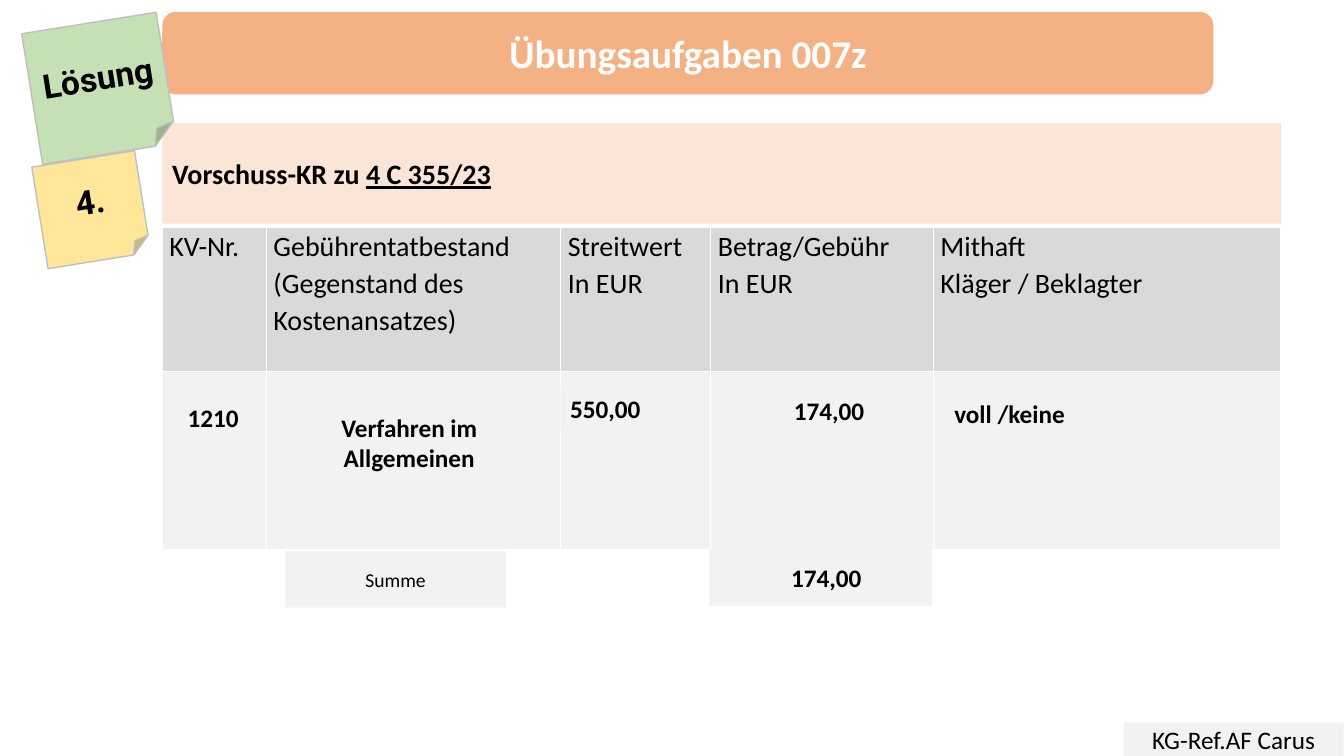
"""Builds the exercise slide with the fee table and its solution."""
import dataclasses

import lxml.etree
import pptx
import pptx.dml.color
import pptx.enum.shapes
import pptx.enum.text
import pptx.oxml.ns
import pptx.util

Cm, Pt = pptx.util.Cm, pptx.util.Pt
RGB = pptx.dml.color.RGBColor.from_string
SHAPE = pptx.enum.shapes.MSO_SHAPE
ALIGN = pptx.enum.text.PP_ALIGN
MIDDLE = pptx.enum.text.MSO_ANCHOR.MIDDLE
qn = pptx.oxml.ns.qn


@dataclasses.dataclass(frozen=True)
class Theme:
    font: str = "Calibri"
    note_font: str = "Roboto"
    ink: str = "000000"
    white: str = "FFFFFF"
    banner: str = "F4B183"
    case: str = "FBE5D6"
    header: str = "D9D9D9"
    cell: str = "F2F2F2"
    green: str = "C5E0B4"
    yellow: str = "FFE699"
    edge: str = "BFBFBF"
    title: int = 28
    note: int = 24
    heading: int = 20
    body: int = 18
    small: int = 14


T = Theme()


def style(p, size, bold=False, color=T.ink, font=T.font, align=None, spacing=None):
    p.font.size, p.font.bold, p.font.name = Pt(size), bold, font
    p.font.color.rgb = RGB(color)
    p.alignment, p.line_spacing = align, spacing


def add_box(box, fill, text="", kind=SHAPE.RECTANGLE, size=T.body, **look):
    sp = s.shapes.add_shape(kind, *map(Cm, box))
    sp.shadow.inherit = False
    sp.fill.solid()
    sp.fill.fore_color.rgb = RGB(fill)
    sp.line.fill.background()
    tf = sp.text_frame
    tf.word_wrap, tf.vertical_anchor = True, MIDDLE
    p = tf.paragraphs[0]
    if text:
        p.add_run().text = text
        style(p, size, **look)
    return sp


prs = pptx.Presentation()
prs.slide_width, prs.slide_height = Cm(33.87), Cm(19.05)
s = prs.slides.add_slide(prs.slide_layouts[5])

banner_box = (4.09, 0.3, 26.49, 2.08)
banner = add_box(banner_box, T.banner, kind=SHAPE.ROUNDED_RECTANGLE)
title = s.shapes.title
banner.element.addnext(title.element)
title.left, title.top, title.width, title.height = map(Cm, banner_box)
title.text_frame.text = "Übungsaufgaben 007z"
title.text_frame.vertical_anchor = MIDDLE
style(title.text_frame.paragraphs[0], T.title, True, T.white, align=ALIGN.CENTER)

columns = [
    (2.62, "KV-Nr."),
    (7.42, "Gebührentatbestand\n(Gegenstand des Kostenansatzes)"),
    (3.78, "Streitwert\nIn EUR"),
    (5.61, "Betrag/Gebühr\nIn EUR"),
    (8.76, "Mithaft\nKläger / Beklagter"),
]
rows = [(3.63, T.header), (4.47, T.cell)]
table = s.shapes.add_table(len(rows), len(columns), Cm(4.09), Cm(5.74),
                           Cm(28.19), Cm(8.1)).table
table.first_row = table.horz_banding = False
for c, (width, heading) in enumerate(columns):
    table.columns[c].width = Cm(width)
    table.cell(0, c).text = heading
    for p in table.cell(0, c).text_frame.paragraphs:
        style(p, T.heading, spacing=1.07)
for r, (height, fill) in enumerate(rows):
    table.rows[r].height = Cm(height)
    for cell in table.rows[r].cells:
        cell.margin_left = cell.margin_right = Cm(0.18)
        cell.margin_top = cell.margin_bottom = 0
        cell.fill.solid()
        cell.fill.fore_color.rgb = RGB(fill)
        tcPr = cell.fill._xPr
        for i, side in enumerate(("a:lnL", "a:lnR", "a:lnT", "a:lnB")):
            ln = lxml.etree.Element(qn(side), w=str(Pt(1)))
            solid = lxml.etree.SubElement(ln, qn("a:solidFill"))
            lxml.etree.SubElement(solid, qn("a:srgbClr"), val=T.white)
            tcPr.insert(i, ln)

case = add_box((4.09, 3.1, 28.19, 2.54), T.case, "Vorschuss-KR zu ",
               size=T.heading, bold=True, align=ALIGN.LEFT)
number = case.text_frame.paragraphs[0].add_run()
number.text = "4 C 355/23"
number.font.underline = True

notes = [
    ("Lösung", T.green, (0.79, 0.56, 3.43, 3.33)),
    ("4.", T.yellow, (0.99, 3.99, 2.62, 2.59)),
]
for text, fill, box in notes:
    note = add_box(box, fill, text, SHAPE.FOLDED_CORNER, T.note, bold=True,
                   font=T.note_font, align=ALIGN.CENTER)
    note.rotation = -9.1
    note.line.color.rgb = RGB(T.edge)
    note.line.width = Pt(1)

centred = dict(bold=True, align=ALIGN.CENTER)
add_box((4.24, 10.08, 2.26, 0.89), T.cell, "1210", **centred)
fee = add_box((7.19, 9.86, 6.25, 3.33), T.cell, "Verfahren im Allgemeinen", **centred)
fee.text_frame.margin_bottom = Cm(0.89)

entries = [
    ("550,00", (14.12, 9.75, 3.2, 1.04)),
    ("174,00", (19.76, 9.58, 2.54, 1.47)),
    ("voll /keine", (23.8, 9.73, 8.33, 1.32)),
]
for text, box in entries:
    add_box(box, T.cell, text, bold=True, align=ALIGN.LEFT, spacing=1.07)

add_box((7.19, 13.89, 5.56, 1.42), T.cell, "Summe", size=T.small, align=ALIGN.CENTER)
total = add_box((17.88, 13.84, 5.61, 1.42), T.cell, "174,00", **centred)
total.text_frame.margin_left = Cm(0.53)
add_box((28.32, 18.21, 5.54, 0.84), T.cell, "KG-Ref.AF Carus", align=ALIGN.CENTER)

prs.save("out.pptx")
